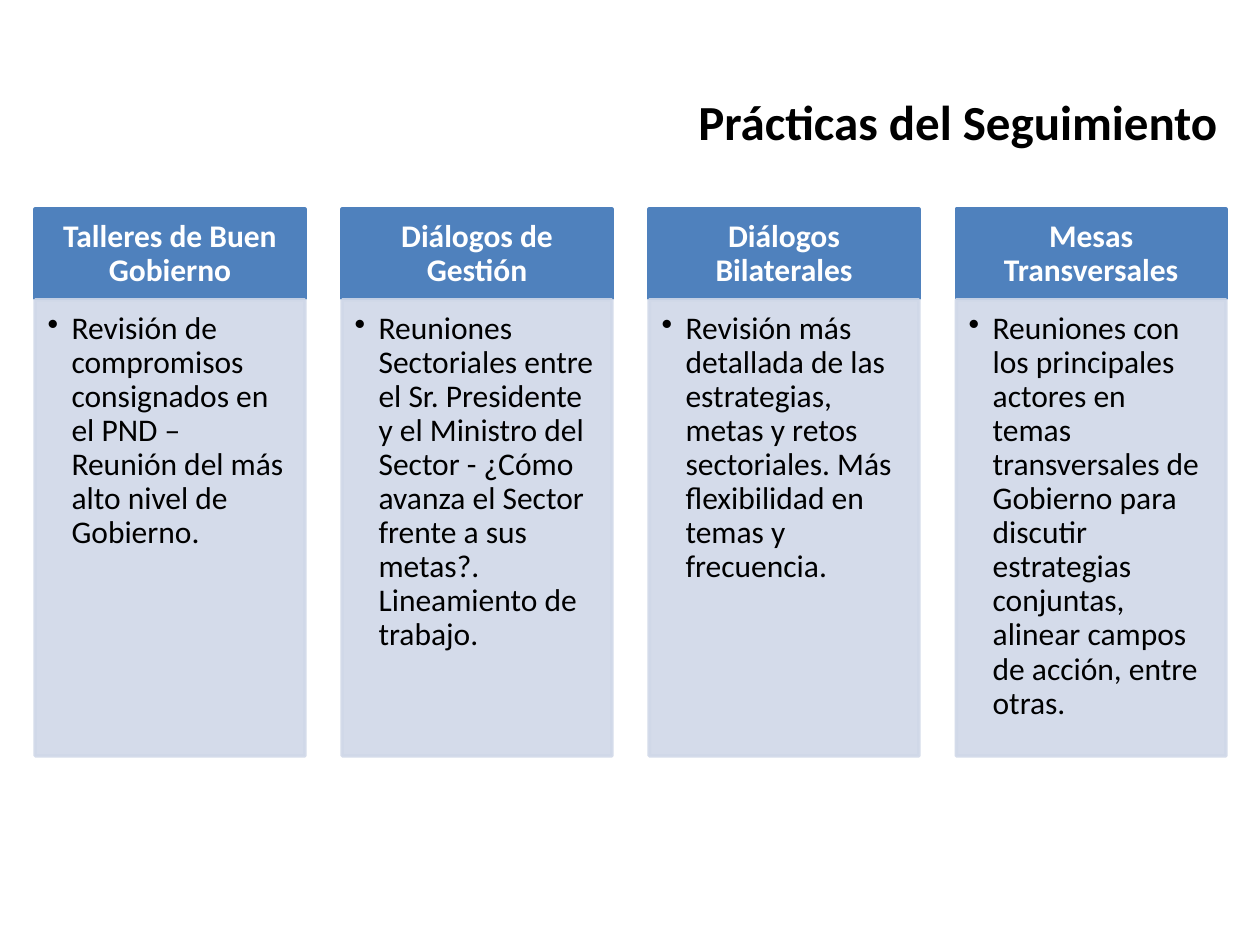
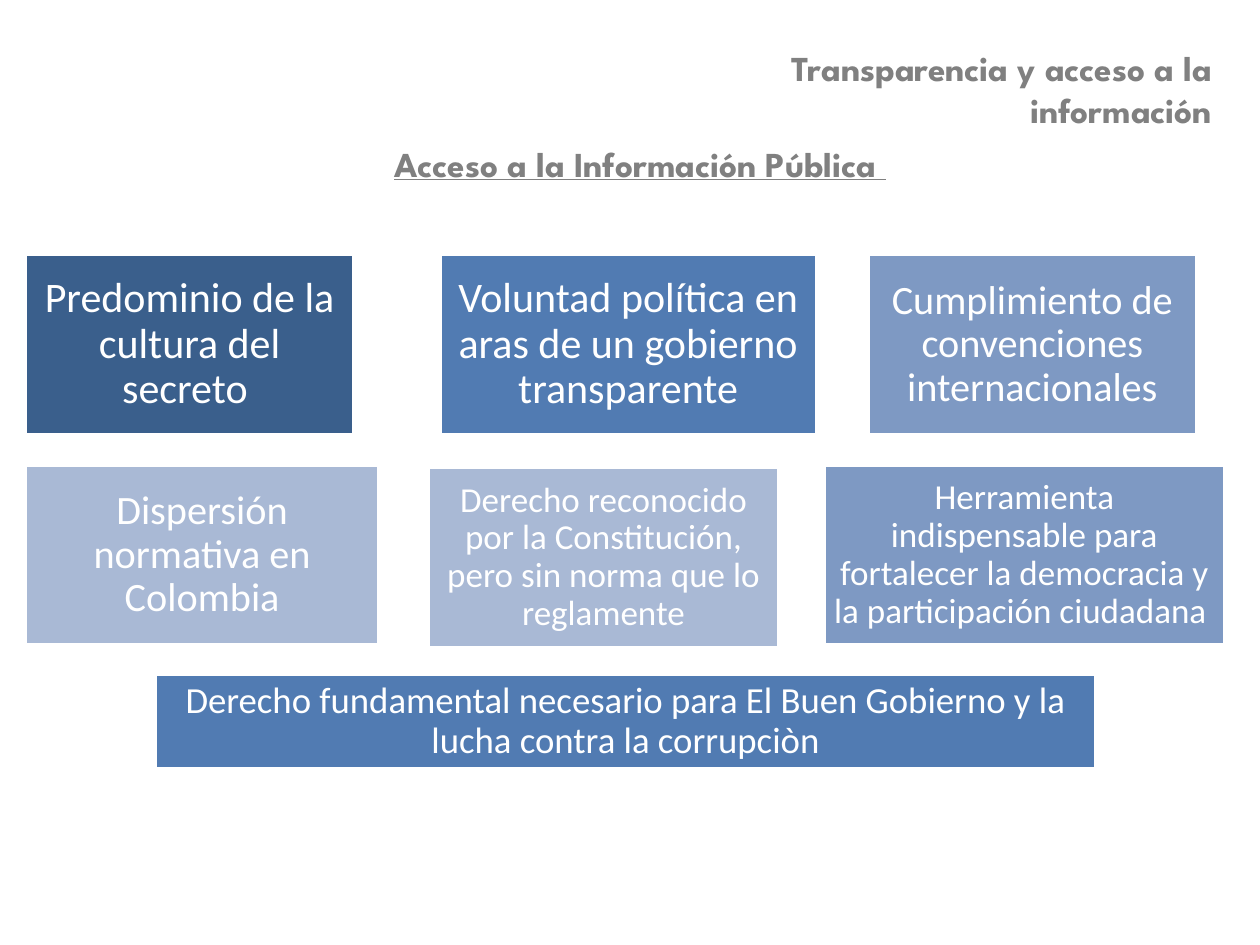
from lxml import etree
from pptx import Presentation
from pptx import util as u
from pptx.dml.color import RGBColor
from pptx.enum import shapes, text
from pptx.oxml import ns

HUES = {
    "black": "000000", "white": "FFFFFF", "grey": "808080",
    "head": "4F81BD", "body": "D0D8E8",
    "navy": "3A5F8C", "blue": "517BB2", "mid": "7E99C3", "pale": "A9B9D5",
}
SANS, SPARTAN = "Calibri", "League Spartan"
LEFT, MID, RIGHT = text.PP_ALIGN.LEFT, text.PP_ALIGN.CENTER, text.PP_ALIGN.RIGHT
TOP, CENTRE = text.MSO_ANCHOR.TOP, text.MSO_ANCHOR.MIDDLE


class Deck:
    """Shared style and the current slide."""

    def __init__(self):
        self.prs = Presentation()
        self.prs.slide_width = u.Inches(10)
        self.prs.slide_height = u.Inches(7.5)
        self.slide = None

    def page(self):
        self.slide = self.prs.slides.add_slide(self.prs.slide_layouts[5])

    def letter(self, shape, words, size, hue, font=SANS, bold=None, line=None,
               align=MID, anchor=CENTRE, pads=(0.1, 0.05, 0.1, 0.05)):
        frame = shape.text_frame
        frame.word_wrap = True
        frame.auto_size = text.MSO_AUTO_SIZE.NONE
        frame.vertical_anchor = anchor
        (frame.margin_left, frame.margin_top,
         frame.margin_right, frame.margin_bottom) = map(u.Inches, pads)
        para = frame.paragraphs[0]
        para.alignment = align
        para.line_spacing = line
        run = para.add_run()
        run.text = words
        run.font.name, run.font.size, run.font.bold = font, u.Pt(size), bold
        run.font.color.rgb = RGBColor.from_string(HUES[hue])
        return para

    def title(self, box, words, *style, **more):
        shape = self.slide.shapes.title
        shape.left, shape.top, shape.width, shape.height = map(u.Inches, box)
        return self.letter(shape, words, *style, bold=True, **more)

    def label(self, box, words, *style, **more):
        shape = self.slide.shapes.add_textbox(*map(u.Inches, box))
        return self.letter(shape, words, *style, **more)

    def block(self, box, fill, edge, alpha=None):
        shape = self.slide.shapes.add_shape(
            shapes.MSO_SHAPE.RECTANGLE, *map(u.Inches, box))
        shape.shadow.inherit = False
        shape.fill.solid()
        shape.fill.fore_color.rgb = RGBColor.from_string(HUES[fill])
        shape.line.color.rgb = RGBColor.from_string(HUES[edge])
        shape.line.width = u.Pt(2)
        if alpha:
            for tone in shape.element.spPr.iter(ns.qn("a:srgbClr")):
                etree.SubElement(tone, ns.qn("a:alpha"), val=str(alpha * 1000))
        return shape

    def bullet(self, para, indent):
        props = para._p.get_or_add_pPr()
        props.set("marL", str(u.Inches(indent)))
        props.set("indent", str(-u.Inches(indent)))
        mark = etree.SubElement(props, ns.qn("a:buChar"))
        mark.set("char", "•")


def practices(deck):
    deck.page()
    deck.title((1.61, 0.68, 8.15, 0.57), "Prácticas del Seguimiento",
               28, "black", align=RIGHT, anchor=TOP)

    # Four columns: heading over a bulleted body
    columns = [
        ("Talleres de Buen Gobierno",
         "Revisión de compromisos consignados en el PND – Reunión del más "
         "alto nivel de Gobierno."),
        ("Diálogos de Gestión",
         "Reuniones Sectoriales entre el Sr. Presidente y el Ministro del "
         "Sector - ¿Cómo avanza el Sector frente a sus metas?. Lineamiento "
         "de trabajo."),
        ("Diálogos Bilaterales",
         "Revisión más detallada de las estrategias, metas y retos "
         "sectoriales. Más flexibilidad en temas y frecuencia."),
        ("Mesas Transversales",
         "Reuniones con los principales actores en temas transversales de "
         "Gobierno para discutir estrategias conjuntas, alinear campos de "
         "acción, entre otras."),
    ]
    left, right, width = 0.28, 9.73, 2.14
    step = (right - left - width) / (len(columns) - 1)
    for i, (head, body) in enumerate(columns):
        x = left + i * step
        top = deck.block((x, 1.66, width, 0.71), "head", "head")
        deck.letter(top, head, 18, "white", bold=True, line=0.9,
                    pads=(0.14, 0.08, 0.14, 0.08))
        base = deck.block((x, 2.38, width, 3.62), "body", "body", alpha=90)
        para = deck.letter(base, body, 18, "black", line=0.9, align=LEFT,
                           anchor=TOP, pads=(0.1, 0.1, 0.14, 0.16))
        deck.bullet(para, 0.19)


def access(deck):
    deck.page()
    para = deck.title((0.14, 0.74, 9.88, 1.11),
                      "Acceso a la Información Pública ", 20, "grey", SPARTAN)
    para.runs[0].font.underline = True

    # Tiles: left, top, width, height, fill, size, inset, words
    tall = 1.43
    tiles = [
        (0.2, 2.02, 2.61, tall, "navy", 24, 0.1,
         "Predominio de la cultura del secreto "),
        (3.49, 2.02, 2.99, tall, "blue", 24, 0.1,
         "Voluntad política en aras de un gobierno transparente"),
        (6.89, 2.02, 2.61, tall, "mid", 23, 0.1,
         "Cumplimiento de convenciones internacionales"),
        (0.2, 3.69, 2.81, tall, "pale", 23, 0.1,
         "Dispersión normativa en Colombia"),
        (3.4, 3.71, 2.78, tall, "pale", 20, 0.08,
         "Derecho reconocido por la Constitución, pero sin norma que lo "
         "reglamente"),
        (6.54, 3.69, 3.18, tall, "mid", 20, 0.08,
         "Herramienta indispensable para fortalecer la democracia y la "
         "participación ciudadana "),
        (1.23, 5.35, 7.47, 0.75, "blue", 21, 0.09,
         "Derecho fundamental necesario para El Buen Gobierno y la lucha "
         "contra la corrupciòn"),
    ]
    for *box, fill, size, pad, words in tiles:
        tile = deck.block(box, fill, "white")
        deck.letter(tile, words, size, "white", line=0.9, pads=(pad,) * 4)

    # Section name at top right
    deck.label((4.72, 0.32, 5, 0.77), "Transparencia y acceso a la información",
               20, "grey", SPARTAN, bold=True, align=RIGHT, anchor=TOP)


def main():
    deck = Deck()
    practices(deck)
    access(deck)
    deck.prs.save("out.pptx")


if __name__ == "__main__":
    main()
